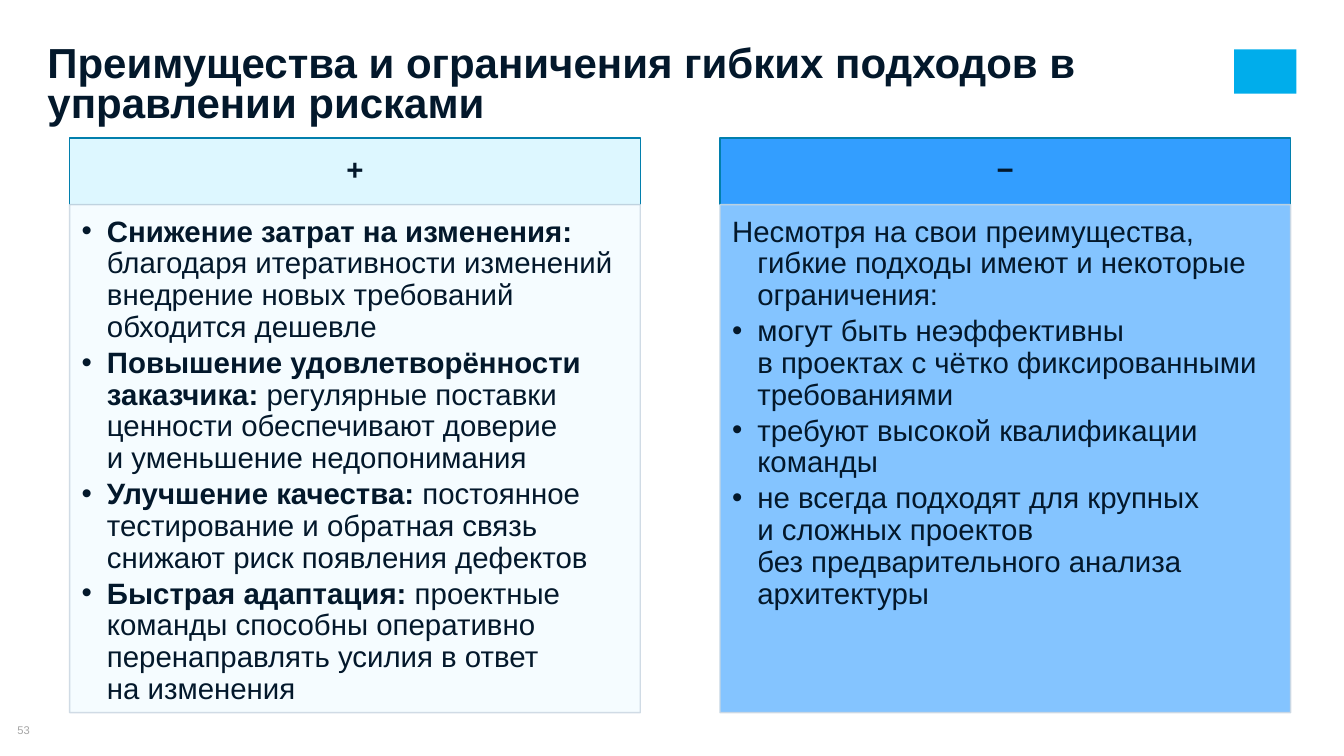
from lxml import etree
from pptx import Presentation
from pptx import util as u
from pptx.dml.color import RGBColor
from pptx.enum import shapes, text
from pptx.oxml.ns import qn

COLORS = {
    "ink": "03182B", "number": "A6A6A6", "accent": "00ADEB",
    "head_edge": "017FAD", "body_edge": "CCD8E3",
    "plus_head": "DDF7FF", "plus_body": "F4FCFF",
    "minus_head": "339EFF", "minus_body": "77BEFF",
}
ALIGN, ANCHOR = text.PP_ALIGN, text.MSO_ANCHOR

ADVANTAGES = [
    ("Снижение затрат на изменения:",
     " благодаря итеративности изменений внедрение новых требований обходится дешевле"),
    ("Повышение удовлетворённости заказчика:",
     " регулярные поставки ценности обеспечивают доверие \nи уменьшение недопонимания"),
    ("Улучшение качества:",
     " постоянное тестирование и обратная связь снижают риск появления дефектов"),
    ("Быстрая адаптация:",
     " проектные команды способны оперативно перенаправлять усилия в ответ \nна изменения"),
]
LIMITS_INTRO = "Несмотря на свои преимущества, гибкие подходы имеют и некоторые ограничения:"
LIMITS = [
    ("", "могут быть неэффективны \nв проектах с чётко фиксированными требованиями"),
    ("", "требуют высокой квалификации команды"),
    ("", "не всегда подходят для крупных \nи сложных проектов \nбез предварительного анализа архитектуры"),
]


def rgb(name):
    return RGBColor.from_string(COLORS[name])


def write(paragraph, words, size=21, bold=False, color="ink", font="Arial",
          align=ALIGN.LEFT, spacing=0.9, after=0):
    """Append words to the paragraph; a newline becomes a line break."""
    paragraph.alignment, paragraph.line_spacing = align, spacing
    paragraph.space_before, paragraph.space_after = u.Pt(0), u.Pt(after)
    for number, line in enumerate(words.split("\n")):
        if number:
            paragraph.add_line_break()
            line_break = paragraph._p.findall(qn("a:br"))[-1]
            etree.SubElement(line_break, qn("a:rPr"), sz=str(size * 100))
        run = paragraph.add_run()
        run.text = line
        run.font.size, run.font.bold, run.font.name = u.Pt(size), bold, font
        run.font.color.rgb = rgb(color)


def hang(paragraph, bullet):
    properties = paragraph._p.get_or_add_pPr()
    properties.set("marL", str(u.Inches(0.25)))
    properties.set("indent", str(-u.Inches(0.25)))
    if bullet:
        etree.SubElement(properties, qn("a:buFont"), typeface="Arial")
        etree.SubElement(properties, qn("a:buChar"), char="•")
    else:
        etree.SubElement(properties, qn("a:buNone"))


def set_opacity(shape, percent):
    for color in shape._element.spPr.iter(qn("a:srgbClr")):
        etree.SubElement(color, qn("a:alpha"), val=str(percent * 1000))


class ComparisonSlide:
    """Holds the slide; boxes are (left, top, width, height) in percent of it."""

    def __init__(self, deck):
        self.width, self.height = deck.slide_width, deck.slide_height
        self.slide = deck.slides.add_slide(deck.slide_layouts[4])
        self.panels = {panel.placeholder_format.idx: panel for panel in self.slide.placeholders}

    def scale(self, box):
        return [round(share * side / 100)
                for share, side in zip(box, (self.width, self.height) * 2)]

    def place(self, panel, box, insets=(0, 0, 0, 0), anchor=ANCHOR.TOP):
        panel.left, panel.top, panel.width, panel.height = self.scale(box)
        frame = panel.text_frame
        frame.word_wrap, frame.auto_size = True, text.MSO_AUTO_SIZE.NONE
        frame.vertical_anchor = anchor
        (frame.margin_left, frame.margin_top,
         frame.margin_right, frame.margin_bottom) = map(u.Inches, insets)
        return frame.paragraphs[0]

    def paint(self, panel, fill, edge):
        panel.fill.solid()
        panel.fill.fore_color.rgb = rgb(fill)
        panel.line.color.rgb = rgb(edge)
        panel.line.width = u.Pt(1)

    def title(self, words, box):
        write(self.place(self.slide.shapes.title, box), words, size=30, bold=True, spacing=0.8)

    def heading(self, idx, words, box, fill):
        panel = self.panels[idx]
        self.paint(panel, fill, "head_edge")
        paragraph = self.place(panel, box, (0.16, 0.09, 0.16, 0.09), ANCHOR.MIDDLE)
        write(paragraph, words, bold=True, align=ALIGN.CENTER)

    def points(self, idx, items, box, fill, intro=None):
        panel = self.panels[idx]
        self.paint(panel, fill, "body_edge")
        set_opacity(panel, 90)
        paragraph = self.place(panel, box, (0.12, 0.12, 0.16, 0.18))
        rows = ([("", intro)] if intro else []) + items
        for number, (lead, rest) in enumerate(rows):
            if number:
                paragraph = panel.text_frame.add_paragraph()
            if lead:
                write(paragraph, lead, bold=True, after=3)
            write(paragraph, rest, after=3)
            hang(paragraph, bullet=rest != intro)

    def label(self, words, box, **style):
        caption = self.slide.shapes.add_textbox(*self.scale(box))
        write(self.place(caption, box, anchor=ANCHOR.MIDDLE), words, **style)

    def mark(self, box, fill):
        block = self.slide.shapes.add_shape(shapes.MSO_SHAPE.RECTANGLE, *self.scale(box))
        block.shadow.inherit = False
        block.fill.solid()
        block.fill.fore_color.rgb = rgb(fill)
        block.line.fill.background()


def main():
    deck = Presentation()
    deck.slide_width, deck.slide_height = u.Inches(13.33), u.Inches(7.5)
    page = ComparisonSlide(deck)
    page.mark((91.82, 6.53, 4.65, 5.87), "accent")
    page.label("53", (0, 95.73, 3.53, 1.73), size=8, color="number",
               align=ALIGN.CENTER, spacing=1)
    page.title("Преимущества и ограничения гибких подходов в управлении рисками",
               (3.53, 6.13, 78.84, 10.8))

    left, pitch, width = 5.18, 48.39, 42.46
    top, head, body = 18.27, 8.8, 67.2
    columns = [("plus", "+", ADVANTAGES, None), ("minus", "−", LIMITS, LIMITS_INTRO)]
    for number, (side, sign, items, intro) in enumerate(columns):
        x = left + number * pitch
        page.heading(1 + 2 * number, sign, (x, top, width, head), f"{side}_head")
        page.points(2 + 2 * number, items, (x, top + head, width, body), f"{side}_body", intro)
    deck.save("out.pptx")


if __name__ == "__main__":
    main()
